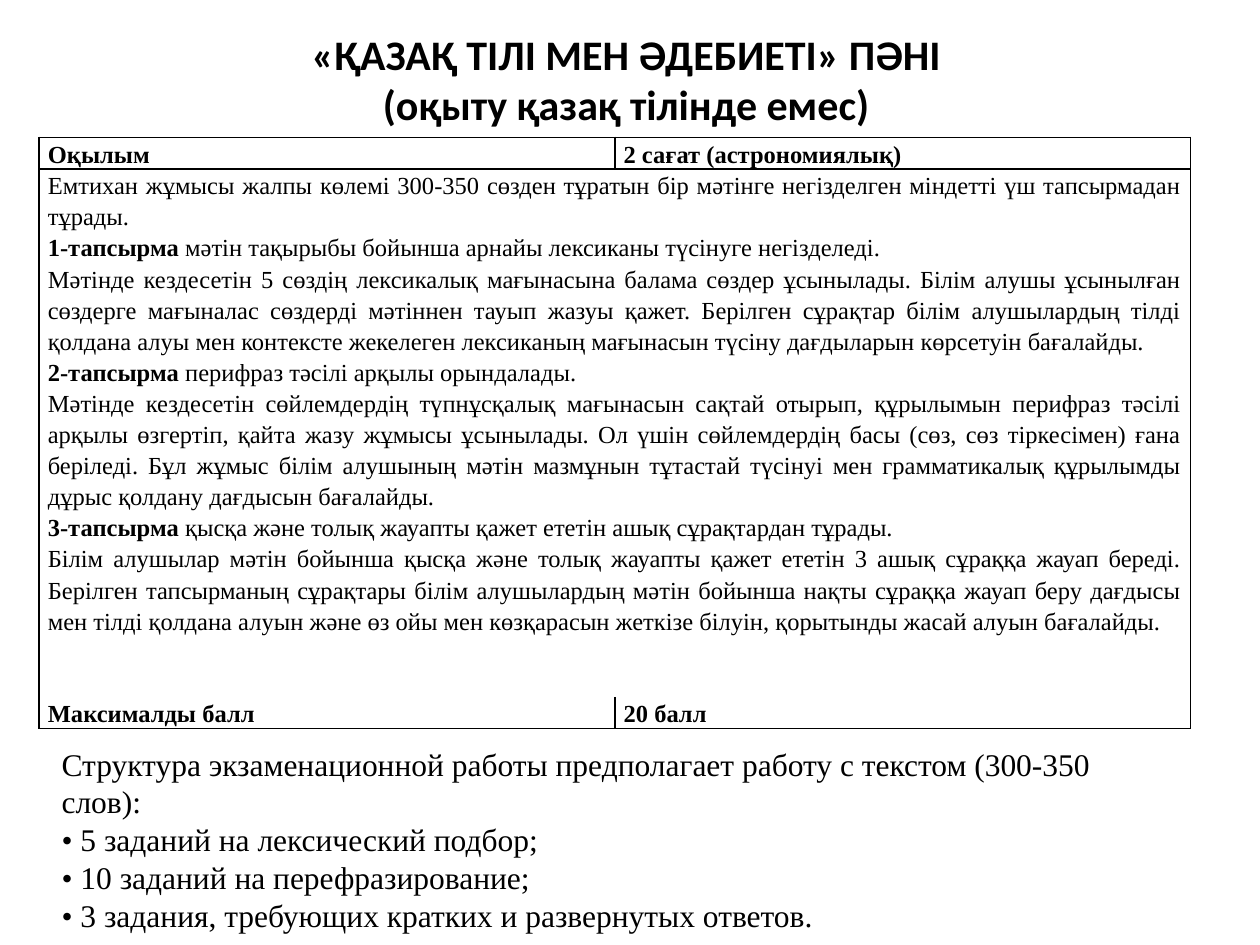
import pptx
import pptx.util
import pptx.dml.color
import pptx.enum.text
import pptx.oxml.ns
import lxml.etree

Inches, Pt = pptx.util.Inches, pptx.util.Pt
ALIGN = pptx.enum.text.PP_ALIGN
BLACK = pptx.dml.color.RGBColor(0, 0, 0)
SERIF = "Times New Roman"


def add_run(p, text, size, bold=False, font=SERIF):
    r = p.add_run()
    r.text = text
    r.font.size, r.font.bold, r.font.name = Pt(size), bold, font
    r.font.color.rgb = BLACK


def set_borders(cell, sides):
    tcPr = cell._tc.get_or_add_tcPr()
    qn = pptx.oxml.ns.qn
    for side in "LRTB":
        ln = lxml.etree.SubElement(tcPr, qn("a:ln" + side), w=str(Pt(1)))
        if side in sides:
            fill = lxml.etree.SubElement(ln, qn("a:solidFill"))
            lxml.etree.SubElement(fill, qn("a:srgbClr"), val=str(BLACK))
        else:
            lxml.etree.SubElement(ln, qn("a:noFill"))


prs = pptx.Presentation()
prs.slide_width, prs.slide_height = Inches(10), Inches(7.5)
s = prs.slides.add_slide(prs.slide_layouts[5])

# Title
title = s.shapes.title
title.left, title.top = Inches(0.47), 0
title.width, title.height = Inches(9), Inches(1.25)
tf = title.text_frame
tf.vertical_anchor = pptx.enum.text.MSO_ANCHOR.MIDDLE
p = tf.paragraphs[0]
p.alignment = ALIGN.CENTER
add_run(p, "«ҚАЗАҚ ТІЛІ МЕН ӘДЕБИЕТІ» ПӘНІ", 24, True, "Calibri")
p.add_line_break()
add_run(p, "(оқыту қазақ тілінде емес)", 24, True, "Calibri")

# Exam table: each cell is a list of paragraphs, each paragraph (bold part, plain part)
tasks = [
    ("", "Емтихан жұмысы жалпы көлемі 300-350 сөзден тұратын бір мәтінге негізделген "
         "міндетті үш тапсырмадан тұрады. "),
    ("1-тапсырма ", "мәтін тақырыбы бойынша арнайы лексиканы түсінуге негізделеді. "),
    ("", "Мәтінде кездесетін 5 сөздің лексикалық мағынасына балама сөздер ұсынылады. "
         "Білім алушы ұсынылған сөздерге мағыналас сөздерді мәтіннен тауып жазуы қажет. "
         "Берілген сұрақтар білім алушылардың тілді қолдана алуы мен контексте жекелеген "
         "лексиканың мағынасын түсіну дағдыларын көрсетуін бағалайды. "),
    ("2-тапсырма ", "перифраз тәсілі арқылы орындалады. "),
    ("", "Мәтінде кездесетін сөйлемдердің түпнұсқалық мағынасын сақтай отырып, құрылымын "
         "перифраз тәсілі арқылы өзгертіп, қайта жазу жұмысы ұсынылады. Ол үшін "
         "сөйлемдердің басы (сөз, сөз тіркесімен) ғана беріледі. Бұл жұмыс білім алушының "
         "мәтін мазмұнын тұтастай түсінуі мен грамматикалық құрылымды дұрыс қолдану "
         "дағдысын бағалайды."),
    ("3-тапсырма ", "қысқа және толық жауапты қажет ететін ашық сұрақтардан тұрады."),
    ("", "Білім алушылар мәтін бойынша қысқа және толық жауапты қажет ететін 3 ашық сұраққа "
         "жауап береді. Берілген тапсырманың сұрақтары білім алушылардың мәтін бойынша "
         "нақты сұраққа жауап беру дағдысы мен тілді қолдана алуын және өз ойы мен "
         "көзқарасын жеткізе білуін, қорытынды жасай алуын бағалайды."),
]
# Row height, visible borders, cells
rows = [
    (0.25, "LRTB", [[("Оқылым", "")], [("2 сағат (астрономиялық)", "")]]),
    (4.19, "LRT", [tasks]),
    (0.25, "LRB", [[("Максималды балл", "")], [("20 балл", "")]]),
]
table = s.shapes.add_table(len(rows), 2, Inches(0.31), Inches(1.09),
                           Inches(9.14), Inches(4.69)).table
table.first_row = table.horz_banding = False
table.cell(1, 0).merge(table.cell(1, 1))
for i, (height, sides, contents) in enumerate(rows):
    table.rows[i].height = Inches(height)
    for cell in table.rows[i].cells:
        cell.margin_left = cell.margin_right = Inches(0.07)
        cell.margin_top = cell.margin_bottom = 0
        set_borders(cell, sides)
        cell.fill.background()
    for j, paragraphs in enumerate(contents):
        tf = table.cell(i, j).text_frame
        for k, (bold, plain) in enumerate(paragraphs):
            p = tf.add_paragraph() if k else tf.paragraphs[0]
            p.alignment = ALIGN.JUSTIFY
            p.line_spacing = 1.15
            if bold:
                add_run(p, bold, 14, True)
            if plain:
                add_run(p, plain, 14)
table.cell(0, 1).text_frame.paragraphs[0].alignment = ALIGN.LEFT

# Summary of the exam structure
tf = s.shapes.add_textbox(Inches(0.39), Inches(5.86), Inches(8.98), Inches(1.62)).text_frame
tf.word_wrap = True
tf.auto_size = pptx.enum.text.MSO_AUTO_SIZE.SHAPE_TO_FIT_TEXT
summary = [
    "Структура экзаменационной работы предполагает работу с текстом (300-350 слов):",
    "• 5 заданий на лексический подбор;",
    "• 10 заданий на перефразирование;",
    "• 3 задания, требующих кратких и развернутых ответов.",
]
for k, text in enumerate(summary):
    p = tf.add_paragraph() if k else tf.paragraphs[0]
    add_run(p, text, 18)

prs.save("out.pptx")
